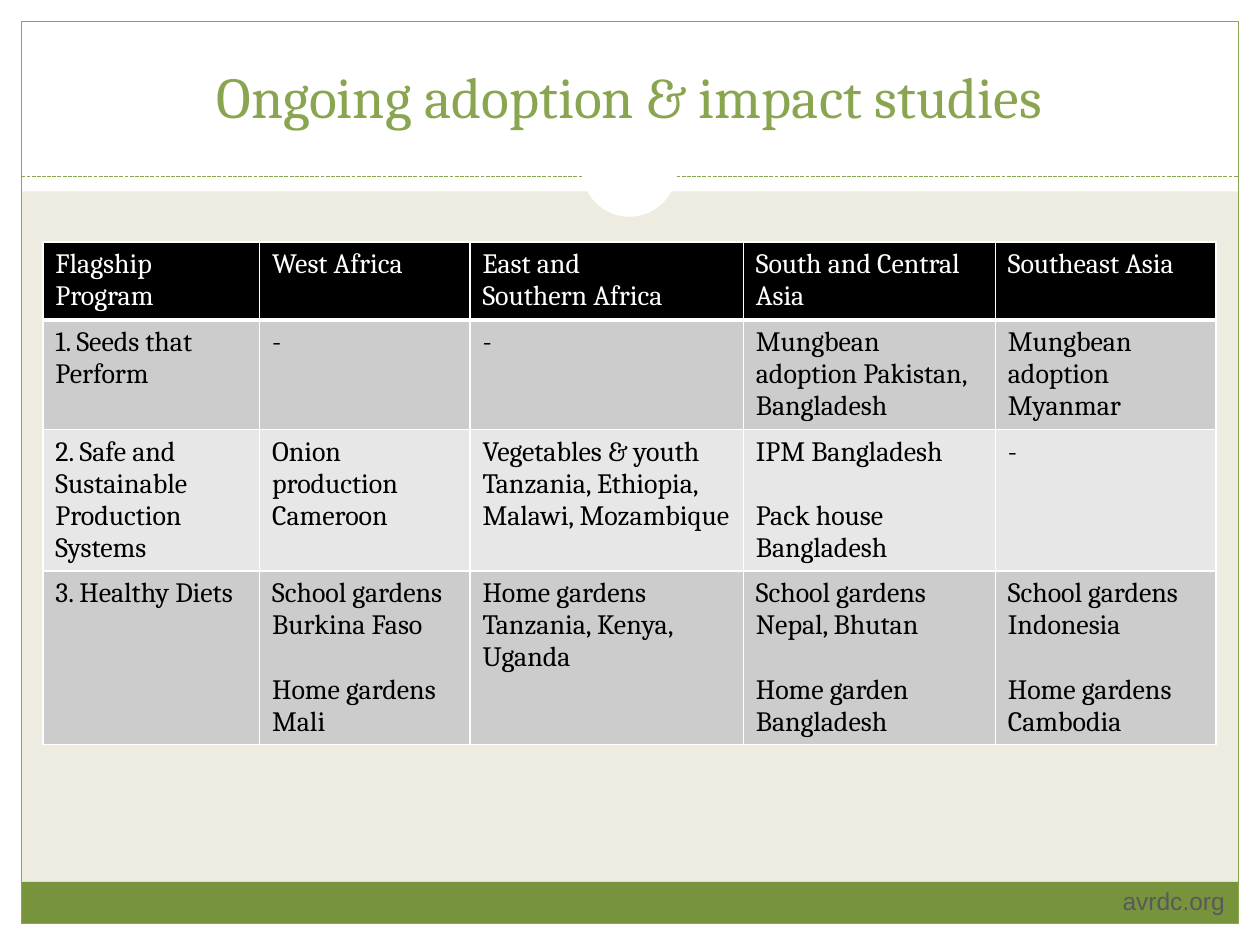
"""Build the slide on ongoing adoption and impact studies by region."""
from dataclasses import dataclass

from lxml import etree
from pptx import Presentation
from pptx.dml.color import RGBColor
from pptx.enum.dml import MSO_LINE
from pptx.enum.shapes import MSO_CONNECTOR, MSO_SHAPE
from pptx.enum.text import MSO_ANCHOR, PP_ALIGN
from pptx.oxml.ns import qn
from pptx.util import Inches, Pt

RECT, OVAL = MSO_SHAPE.RECTANGLE, MSO_SHAPE.OVAL
LEFT, CENTER, RIGHT = PP_ALIGN.LEFT, PP_ALIGN.CENTER, PP_ALIGN.RIGHT


@dataclass(frozen=True)
class Theme:
    paper: str = "EEECE1"
    white: str = "FFFFFF"
    black: str = "000000"
    green: str = "89A54F"
    band: str = "77933C"
    gray: str = "595959"
    rows: tuple = ("CCCCCC", "E7E7E7")
    font: str = "Cambria"
    footer_font: str = "Arial"
    title_size: int = 33
    body_size: int = 16
    footer_size: int = 14
    gap: float = 18.5
    rule: float = 0.75


T = Theme()
W, H, M = 10, 7.5, 0.17
HEAD, RULE_Y, BAND_Y = 1.52, 1.4, 7
TITLE = "Ongoing adoption & impact studies"
FOOTER = "avrdc.org"
HEADER = ["Flagship Program", "West Africa", "East and\nSouthern Africa",
          "South and Central Asia", "Southeast Asia"]
STUDIES = [
    ["1. Seeds that Perform", "-", "-",
     "Mungbean adoption Pakistan, Bangladesh", "Mungbean adoption Myanmar"],
    ["2. Safe and Sustainable Production Systems", "Onion production Cameroon",
     "Vegetables & youth Tanzania, Ethiopia, Malawi, Mozambique",
     "IPM Bangladesh\nPack house Bangladesh", "-"],
    ["3. Healthy Diets", "School gardens Burkina Faso\nHome gardens Mali",
     "Home gardens Tanzania, Kenya, Uganda",
     "School gardens Nepal, Bhutan\nHome garden Bangladesh",
     "School gardens Indonesia\nHome gardens Cambodia"],
]
TABLE_AT = (0.34, 1.92)
COLS = [1.72, 1.67, 2.17, 2, 1.75]
ROWS = [0.62, 0.87, 1.12, 1.37]
PANELS = [
    (RECT, (0, H - M, W, M), T.white),
    (RECT, (0, 0, W, HEAD), T.white),
    (RECT, (0, 0, M, H), T.white),
    (RECT, (W - M, 0, M, H), T.white),
    (RECT, (M, BAND_Y, W - 2 * M, H - M - BAND_Y), T.band),
]
NOTCH = (OVAL, (4.62, 0.97, 0.75, 0.75), T.white)


def rgb(value):
    return RGBColor.from_string(value)


def box(at):
    return [Inches(v) for v in at]


def write(tf, text, size=T.body_size, color=T.black, font=T.font, align=LEFT, gap=0):
    tf.word_wrap = True
    for i, line in enumerate(text.split("\n")):
        p = tf.paragraphs[0] if i == 0 else tf.add_paragraph()
        p.alignment = align
        p.space_before = Pt(gap if i else 0)
        r = p.add_run()
        r.text = line
        r.font.size, r.font.name, r.font.color.rgb = Pt(size), font, rgb(color)


def add_panel(s, kind, at, fill=None, line=None):
    sp = s.shapes.add_shape(kind, *box(at))
    sp.shadow.inherit = False
    if fill:
        sp.fill.solid()
        sp.fill.fore_color.rgb = rgb(fill)
    else:
        sp.fill.background()
    if line:
        sp.line.color.rgb, sp.line.width = rgb(line), Pt(T.rule)
    else:
        sp.line.fill.background()


def add_rule(s):
    cx = s.shapes.add_connector(MSO_CONNECTOR.STRAIGHT, *box((M, RULE_Y, W - M, RULE_Y)))
    cx.line.color.rgb, cx.line.width = rgb(T.green), Pt(T.rule)
    cx.line.dash_style = MSO_LINE.SQUARE_DOT
    dash = cx.line._get_or_add_ln().find(qn("a:prstDash"))
    dash.set("val", "sysDash")
    etree.SubElement(cx._element.spPr, qn("a:effectLst"))


def set_borders(cell, top, bottom):
    tc_pr = cell._tc.get_or_add_tcPr()
    for side, width in (("L", 1), ("R", 1), ("T", top), ("B", bottom)):
        ln = etree.SubElement(tc_pr, qn(f"a:ln{side}"), w=str(Pt(width)))
        fill = etree.SubElement(ln, qn("a:solidFill"))
        etree.SubElement(fill, qn("a:srgbClr"), val=T.white)


def add_studies(s):
    table = s.shapes.add_table(len(ROWS), len(COLS),
                               *box((*TABLE_AT, sum(COLS), sum(ROWS)))).table
    for column, width in zip(table.columns, COLS):
        column.width = Inches(width)
    for i, texts in enumerate([HEADER] + STUDIES):
        table.rows[i].height = Inches(ROWS[i])
        head = i == 0
        for j, text in enumerate(texts):
            cell = table.cell(i, j)
            set_borders(cell, 3 if i == 1 else 1, 3 if head else 1)
            cell.fill.solid()
            cell.fill.fore_color.rgb = rgb(T.black if head else T.rows[(i - 1) % 2])
            write(cell.text_frame, text, color=T.white if head else T.black,
                  gap=0 if head else T.gap)


def main():
    prs = Presentation()
    prs.slide_width, prs.slide_height = Inches(W), Inches(H)
    s = prs.slides.add_slide(prs.slide_layouts[5])
    s.background.fill.solid()
    s.background.fill.fore_color.rgb = rgb(T.paper)
    for kind, at, fill in PANELS:
        add_panel(s, kind, at, fill)
    add_panel(s, RECT, (M, M, W - 2 * M, H - 2 * M), line=T.green)
    add_rule(s)
    add_panel(s, *NOTCH)

    footer = s.shapes.add_textbox(*box((8.33, 6.98, 1.49, 0.34)))
    write(footer.text_frame, FOOTER, size=T.footer_size, color=T.gray,
          font=T.footer_font, align=RIGHT)

    title = s.shapes.title
    title.left, title.top, title.width, title.height = box((0.33, 0.25, 9.33, 0.83))
    title.text_frame.vertical_anchor = MSO_ANCHOR.BOTTOM
    write(title.text_frame, TITLE, size=T.title_size, color=T.green, align=CENTER)
    s.shapes._spTree.append(title._element)

    add_studies(s)
    prs.save("out.pptx")


if __name__ == "__main__":
    main()
